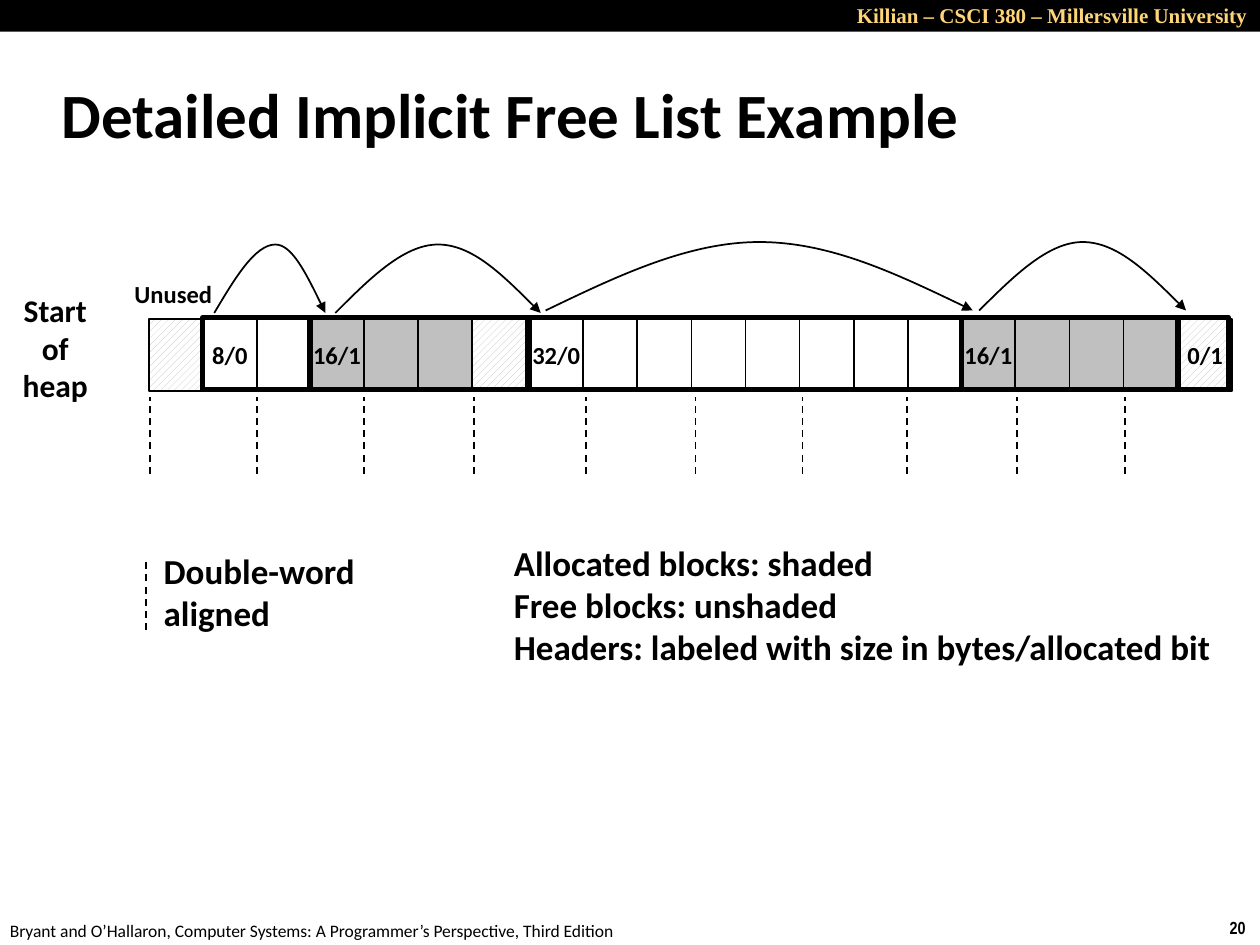
from dataclasses import dataclass

from lxml.etree import SubElement
from pptx import Presentation
from pptx.dml.color import RGBColor
from pptx.enum.dml import MSO_LINE_DASH_STYLE as Dash, MSO_PATTERN_TYPE as Pattern
from pptx.enum.shapes import MSO_CONNECTOR as Connector, MSO_SHAPE as Shape
from pptx.enum.text import MSO_ANCHOR as Anchor, PP_ALIGN as Align
from pptx.oxml.ns import qn
from pptx.util import Cm, Pt


@dataclass(frozen=True)
class Theme:
    ink: str = "000000"
    paper: str = "FFFFFF"
    shade: str = "C0C0C0"
    gold: str = "FFD579"
    body_font: str = "Calibri"
    header_font: str = "Times New Roman"
    number_font: str = "Arial Narrow"
    title: int = 36
    legend: int = 20
    side: int = 18
    label: int = 14
    header: int = 12
    footer: int = 10
    thin: int = 1
    thick: int = 3


THEME = Theme()

# All lengths are centimetres; a place is left, top, width, height.
TEXTS = [
    (["Killian – CSCI 380 – Millersville University"], (15.44, -0.08, 9.96, 0.76),
     dict(size=THEME.header, font=THEME.header_font, color=THEME.gold,
          align=Align.RIGHT, wrap=True)),
    (["20"], (24.54, 18.36, 0.86, 0.69),
     dict(size=THEME.footer, font=THEME.number_font)),
    (["Bryant and O’Hallaron, Computer Systems: A Programmer’s Perspective, Third Edition"],
     (-0.05, 18.42, 12.9, 0.69), dict(size=THEME.footer, bold=False)),
    (["Detailed Implicit Free List Example"], (0.99, 1.22, 21.08, 2.11),
     dict(size=THEME.title, anchor=Anchor.MIDDLE, wrap=True)),
    (["Start", "of", "heap"], (0.2, 5.72, 1.83, 2.57),
     dict(size=THEME.side, align=Align.CENTER, anchor=Anchor.MIDDLE)),
    (["Unused"], (2.34, 5.46, 2.31, 0.94),
     dict(size=THEME.label, align=Align.CENTER, anchor=Anchor.MIDDLE)),
    (["Double-word", "aligned"], (3.05, 10.95, 5.18, 1.96),
     dict(size=THEME.legend, anchor=Anchor.MIDDLE, wrap=True)),
    (["Allocated blocks: shaded", "Free blocks: unshaded",
      "Headers: labeled with size in bytes/allocated bit"],
     (10.11, 10.8, 14.71, 2.82), dict(size=THEME.legend)),
]

# left edge, header label, one fill per word
BLOCKS = [
    (3.0, "", ["hatched"]),
    (4.09, "8/0", ["free"] * 2),
    (6.25, "16/1", ["allocated"] * 3 + ["hatched"]),
    (10.67, "32/0", ["free"] * 8),
    (19.38, "16/1", ["allocated"] * 4),
    (23.75, "0/1", ["hatched"]),
]
HEAP_END = 24.77
WORD_WIDTH, WORD_HEIGHT, WORD_TOP, FRAME_TOP = 1.09, 1.45, 6.43, 6.4

# left, top, width, peak as a share of the width
ARCS = [(4.32, 4.93, 2.24, 0.55), (6.76, 4.93, 4.14, 0.5),
        (11.0, 4.88, 8.61, 0.5), (19.74, 4.88, 4.17, 0.5)]
ARC_HEIGHT = 1.38

ALIGNMENT_MARKS = [3.02, 5.18, 7.34, 9.55, 11.81, 14.02, 16.18, 18.29, 20.5, 22.68]
MARK_TOP, MARK_BOTTOM = 8.0, 9.55
LEGEND_MARK = (2.95, 11.3, 12.7)


def rgb(value):
    return RGBColor.from_string(value)


def write(frame, lines, size, font=THEME.body_font, color=THEME.ink, bold=True,
          align=Align.LEFT, anchor=Anchor.TOP, wrap=False):
    frame.word_wrap = wrap
    frame.vertical_anchor = anchor
    for index, line in enumerate(lines):
        para = frame.paragraphs[0] if index == 0 else frame.add_paragraph()
        para.alignment = align
        span = para.add_run()
        span.text = line
        span.font.size, span.font.name, span.font.bold = Pt(size), font, bold
        span.font.color.rgb = rgb(color)


def stroke(shape, width):
    shape.line.color.rgb = rgb(THEME.ink)
    shape.line.width = Pt(width)


def add_box(page, place, line_width=None):
    box = page.shapes.add_shape(Shape.RECTANGLE, *map(Cm, place))
    box.shadow.inherit = False
    if line_width:
        stroke(box, line_width)
    else:
        box.line.fill.background()
    return box


def fill_word(box, kind):
    if kind == "hatched":
        box.fill.patterned()
        box.fill.pattern = Pattern.WIDE_UPWARD_DIAGONAL
        box.fill.fore_color.rgb = rgb(THEME.shade)
        box.fill.back_color.rgb = rgb(THEME.paper)
    else:
        box.fill.solid()
        box.fill.fore_color.rgb = rgb(THEME.shade if kind == "allocated" else THEME.paper)


def add_heap(page):
    for left, label, kinds in BLOCKS:
        for index, kind in enumerate(kinds):
            box = add_box(page, (left + index * WORD_WIDTH, WORD_TOP, WORD_WIDTH, WORD_HEIGHT),
                          THEME.thin)
            fill_word(box, kind)
            if index == 0 and label:
                write(box.text_frame, [label], THEME.label,
                      align=Align.CENTER, anchor=Anchor.MIDDLE)
    edges = [left for left, _, _ in BLOCKS[1:]] + [HEAP_END]
    for left, right in zip(edges, edges[1:]):
        frame = add_box(page, (left, FRAME_TOP, right - left, WORD_HEIGHT), THEME.thick)
        frame.fill.background()


def add_mark(page, x, top, bottom):
    mark = page.shapes.add_connector(Connector.STRAIGHT, Cm(x), Cm(bottom), Cm(x), Cm(top))
    stroke(mark, THEME.thin)
    mark.line.dash_style = Dash.DASH
    SubElement(mark._element.spPr, qn("a:effectLst"))


def add_arc(page, left, top, width, peak):
    """Draw a curved arrow that rises to its peak and falls to the next header."""
    bottom, middle = top + ARC_HEIGHT, left + width * peak
    builder = page.shapes.build_freeform(Cm(left), Cm(bottom))
    builder.add_line_segments([(Cm(middle), Cm(top)), (Cm(left + width), Cm(bottom))],
                              close=False)
    arc = builder.convert_to_shape()
    arc.shadow.inherit = False
    arc.fill.background()
    stroke(arc, THEME.thin)

    fall = (1 - peak) / 3
    curves = [[(peak / 3, 0.5), (peak * 2 / 3, 0), (peak, 0)],
              [(peak + fall, 0), (peak + 2 * fall, 0.5), (1, 1)]]
    properties = arc._element.spPr
    for segment, points in zip(list(properties.iter(qn("a:lnTo"))), curves):
        segment.tag = qn("a:cubicBezTo")
        segment.remove(segment[0])
        for x, y in points:
            SubElement(segment, qn("a:pt"), x=str(Cm(width * x)), y=str(Cm(ARC_HEIGHT * y)))
    SubElement(properties.find(qn("a:ln")), qn("a:tailEnd"), type="triangle")


def main():
    deck = Presentation()
    deck.slide_width, deck.slide_height = Cm(25.4), Cm(19.05)
    page = deck.slides.add_slide(deck.slide_layouts[6])

    banner = add_box(page, (0, 0, 25.4, 0.64))
    banner.fill.solid()
    banner.fill.fore_color.rgb = rgb(THEME.ink)
    add_heap(page)
    for arc in ARCS:
        add_arc(page, *arc)
    for x in ALIGNMENT_MARKS:
        add_mark(page, x, MARK_TOP, MARK_BOTTOM)
    add_mark(page, *LEGEND_MARK)
    for lines, place, style in TEXTS:
        box = page.shapes.add_textbox(*map(Cm, place))
        write(box.text_frame, lines, **style)

    deck.save("out.pptx")


if __name__ == "__main__":
    main()
